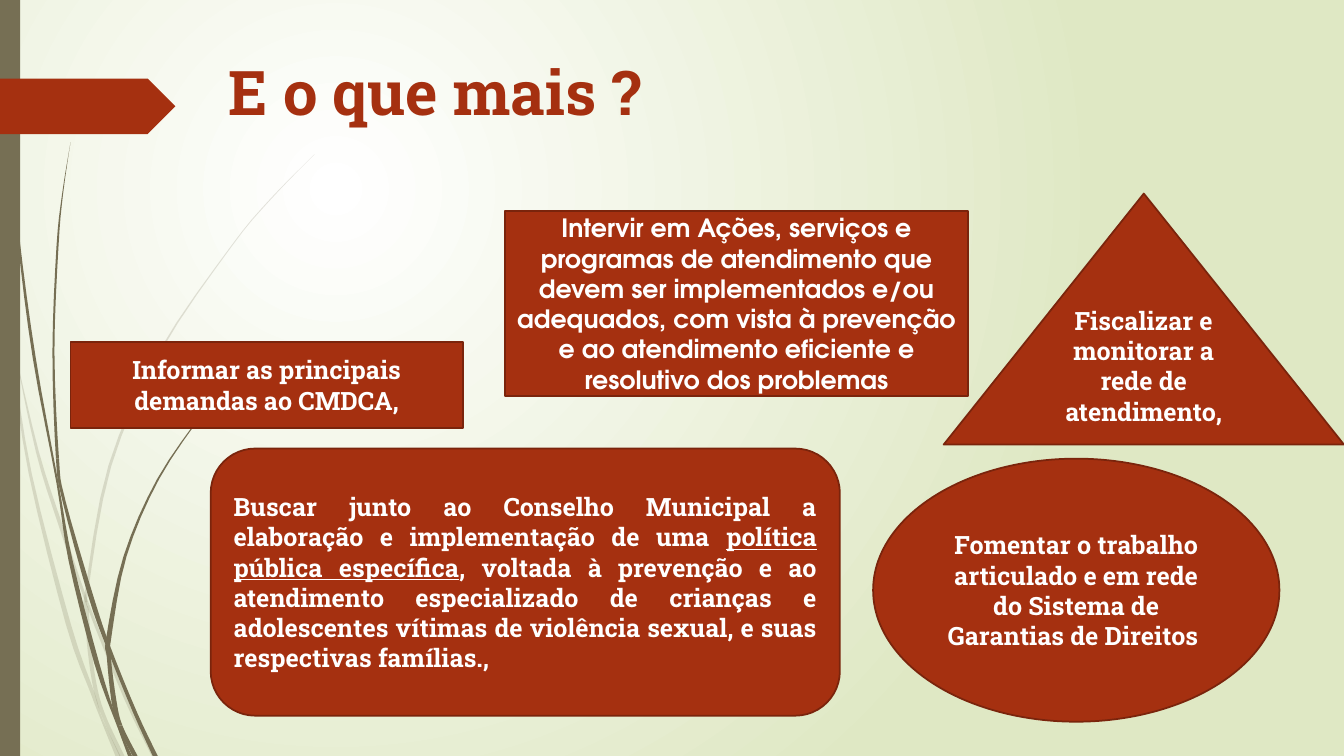
from lxml import etree
from pptx import Presentation
from pptx.dml.color import RGBColor
from pptx.enum.shapes import MSO_SHAPE
from pptx.enum.text import MSO_ANCHOR, PP_ALIGN
from pptx.oxml.ns import qn
from pptx.util import Inches, Pt

RECT, ROUNDED, OVAL = MSO_SHAPE.RECTANGLE, MSO_SHAPE.ROUNDED_RECTANGLE, MSO_SHAPE.OVAL
TRIANGLE, TAG = MSO_SHAPE.ISOSCELES_TRIANGLE, MSO_SHAPE.PENTAGON
CENTER, JUSTIFY = PP_ALIGN.CENTER, PP_ALIGN.JUSTIFY
MIDDLE, BOTTOM = MSO_ANCHOR.MIDDLE, MSO_ANCHOR.BOTTOM

THEME = {
    "red": RGBColor.from_string("A53010"),
    "outline": RGBColor.from_string("7A240C"),
    "olive": RGBColor.from_string("766F54"),
    "white": RGBColor.from_string("FFFFFF"),
    "green": RGBColor.from_string("DFE8C4"),
    "slab": "Roboto Slab",
    "sans": "TeX Gyre Adventor",
    "title": Pt(44),
    "body": Pt(18),
    "line": Pt(1.25),
}

# Content
TITLE = "E o que mais ?"

# Shape, (left, top, width, height), alignment, font, bottom inset, runs (text, underlined)
ACTIONS = [
    (OVAL, (8.66, 4.55, 4.03, 2.61), CENTER, "slab", 0.05,
     [("Fomentar o trabalho articulado e em rede do Sistema de Garantias de Direitos ", False)]),
    (ROUNDED, (2.09, 4.45, 6.24, 2.65), JUSTIFY, "slab", 0.05,
     [("Buscar junto ao Conselho Municipal a elaboração e implementação de uma ", False),
      ("política pública específica", True),
      (", voltada à prevenção e ao atendimento especializado de crianças e adolescentes "
       "vítimas de violência sexual, e suas respectivas famílias.,", False)]),
    (TRIANGLE, (9.36, 1.92, 3.97, 2.49), CENTER, "slab", 0.37,
     [("Fiscalizar e monitorar a rede de atendimento,", False)]),
    (RECT, (0.7, 3.39, 3.89, 0.86), CENTER, "slab", 0.05,
     [("Informar as principais demandas ao CMDCA,", False)]),
    (RECT, (5.01, 2.09, 4.59, 1.84), CENTER, "sans", 0.05,
     [("Intervir em Ações, serviços e programas de atendimento que devem ser implementados "
       "e/ou adequados, com vista à prevenção e ao atendimento eficiente e resolutivo dos "
       "problemas", False)]),
]

# Grass blades: opacity, indexes of the joints, middle points as (x, y, blade width)
BLADES = [
    (20, (1, 5),
     [(0, 2.9, 0.03), (0.11, 3.5, 0.02), (0.3, 4.7, 0.03), (0.68, 6.2, 0.05),
      (0.92, 6.88, 0.04), (1.01, 7.14, 0.02), (1.17, 7.5, 0.05)]),
    (20, (3,),
     [(0.14, 3.45, 0), (0.37, 4.48, 0.03), (0.6, 5.21, 0.04), (0.86, 5.97, 0.03),
      (1.25, 6.93, 0.04), (1.53, 7.5, 0.05)]),
    (20, (5, 6, 9),
     [(3.12, 1.53, 0), (2.68, 1.98, 0.01), (2.29, 2.45, 0.01), (1.59, 3.48, 0.02),
      (1.09, 4.62, 0.03), (0.86, 5.86, 0.03), (0.86, 6.05, 0.04), (0.89, 6.46, 0.04),
      (0.95, 6.85, 0.04), (1.04, 7.13, 0.04), (1.21, 7.5, 0.05)]),
    (100, (5, 8),
     [(0.03, 0, 0.01), (0.04, 0.48, 0.01), (0.07, 1.1, 0.01), (0.18, 2.33, 0.02),
      (0.34, 3.55, 0.03), (0.57, 4.79, 0.02), (0.7, 5.56, 0.04), (0.96, 6.58, 0.05),
      (1.17, 7.2, 0.02), (1.29, 7.5, 0.04)]),
    (100, (4, 5, 7),
     [(0.7, 1.41, 0), (0.62, 1.93, 0.01), (0.57, 2.45, 0.02), (0.53, 3.49, 0.02),
      (0.57, 4.55, 0.03), (0.63, 4.95, 0.03), (0.9, 5.91, 0.05), (1.08, 6.43, 0.04),
      (1.34, 7.07, 0.04), (1.54, 7.5, 0.05)]),
    (100, (5, 6, 8),
     [(2.6, 3.44, 0), (2.31, 3.73, 0.01), (2.04, 4.06, 0.01), (1.57, 4.75, 0.02),
      (1.24, 5.52, 0.03), (1.08, 6.32, 0.05), (1.08, 6.52, 0.04), (1.13, 6.95, 0.05),
      (1.19, 7.2, 0.05), (1.34, 7.5, 0.05)]),
]
STEPS = 4


def smooth(points):
    """Catmull-Rom curve through the points."""
    padded = [points[0], *points, points[-1]]
    curve = [points[0]]
    for a, b, c, d in zip(padded, padded[1:], padded[2:], padded[3:]):
        for t in (i / STEPS for i in range(1, STEPS + 1)):
            curve.append(tuple(
                q + ((r - p) * t + (2 * p - 5 * q + 4 * r - u) * t ** 2
                     + (3 * q - p - 3 * r + u) * t ** 3) / 2
                for p, q, r, u in zip(a, b, c, d)))
    return curve


def paint(sp, color, outline=None):
    sp.shadow.inherit = False
    sp.fill.solid()
    sp.fill.fore_color.rgb = color
    if outline is None:
        sp.line.fill.background()
    else:
        sp.line.color.rgb = outline
        sp.line.width = THEME["line"]


def add_block(s, kind, box, color, outline=None):
    sp = s.shapes.add_shape(kind, *map(Inches, box))
    paint(sp, color, outline)
    return sp


def add_blade(s, opacity, joints, points):
    curve = smooth(points)
    ends = [0, *(j * STEPS for j in joints), len(curve) - 1]
    for start, end in zip(ends, ends[1:]):
        piece = curve[start:end + 1]
        edge = [(x + w / 2, y) for x, y, w in piece]
        edge += [(x - w / 2, y) for x, y, w in reversed(piece)]
        edge = [(Inches(x), Inches(y)) for x, y in edge]
        builder = s.shapes.build_freeform(*edge[0])
        builder.add_line_segments(edge[1:], close=True)
        sp = builder.convert_to_shape()
        paint(sp, THEME["olive"])
        if opacity < 100:
            clr = sp._element.spPr.find(qn("a:solidFill"))[0]
            etree.SubElement(clr, qn("a:alpha"), val=str(opacity * 1000))


def set_text(sp, runs, font, size, color, align=None, anchor=MIDDLE):
    tf = sp.text_frame
    tf.word_wrap = True
    tf.vertical_anchor = anchor
    p = tf.paragraphs[0]
    p.alignment = align
    for text, underlined in runs:
        r = p.add_run()
        r.text = text
        f = r.font
        f.name, f.size, f.bold = font, size, True
        f.color.rgb = color
        if underlined:
            f.underline = True


def set_background(s):
    fill = s.background.fill
    fill.gradient()
    for stop, color, position in zip(fill.gradient_stops, ("white", "green"), (0, 1)):
        stop.color.rgb = THEME[color]
        stop.position = position
    grad = s._element.find(".//" + qn("a:gradFill"))
    grad.remove(grad.find(qn("a:lin")))
    circle = etree.SubElement(grad, qn("a:path"), {"path": "circle"})
    etree.SubElement(circle, qn("a:fillToRect"), l="50000", t="50000", r="100000", b="100000")


def main():
    prs = Presentation()
    prs.slide_width, prs.slide_height = Inches(13.33), Inches(7.5)
    s = prs.slides.add_slide(prs.slide_layouts[6])
    set_background(s)

    # Grass, side bar and tag
    for blade in BLADES:
        add_blade(s, *blade)
    add_block(s, RECT, (0, 0, 0.2, 7.5), THEME["olive"])
    add_block(s, TAG, (0, 0.78, 1.74, 0.55), THEME["red"])

    # Title
    title = s.shapes.add_textbox(*map(Inches, (2.17, 0.3, 9, 1.02)))
    set_text(title, [(TITLE, False)], THEME["slab"], THEME["title"], THEME["red"], anchor=BOTTOM)

    # Actions
    for kind, box, align, font, inset, runs in ACTIONS:
        sp = add_block(s, kind, box, THEME["red"], THEME["outline"])
        sp.text_frame.margin_bottom = Inches(inset)
        set_text(sp, runs, THEME[font], THEME["body"], THEME["white"], align)

    prs.save("out.pptx")


if __name__ == "__main__":
    main()
